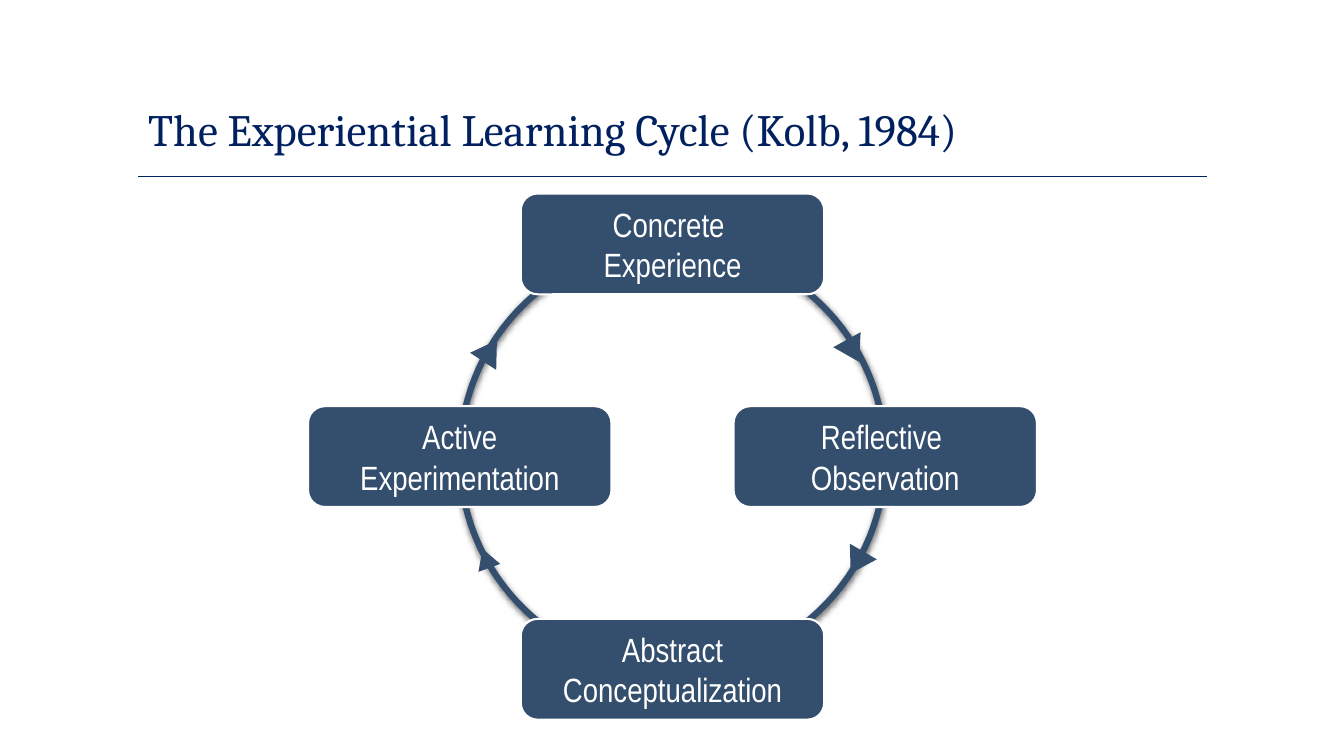
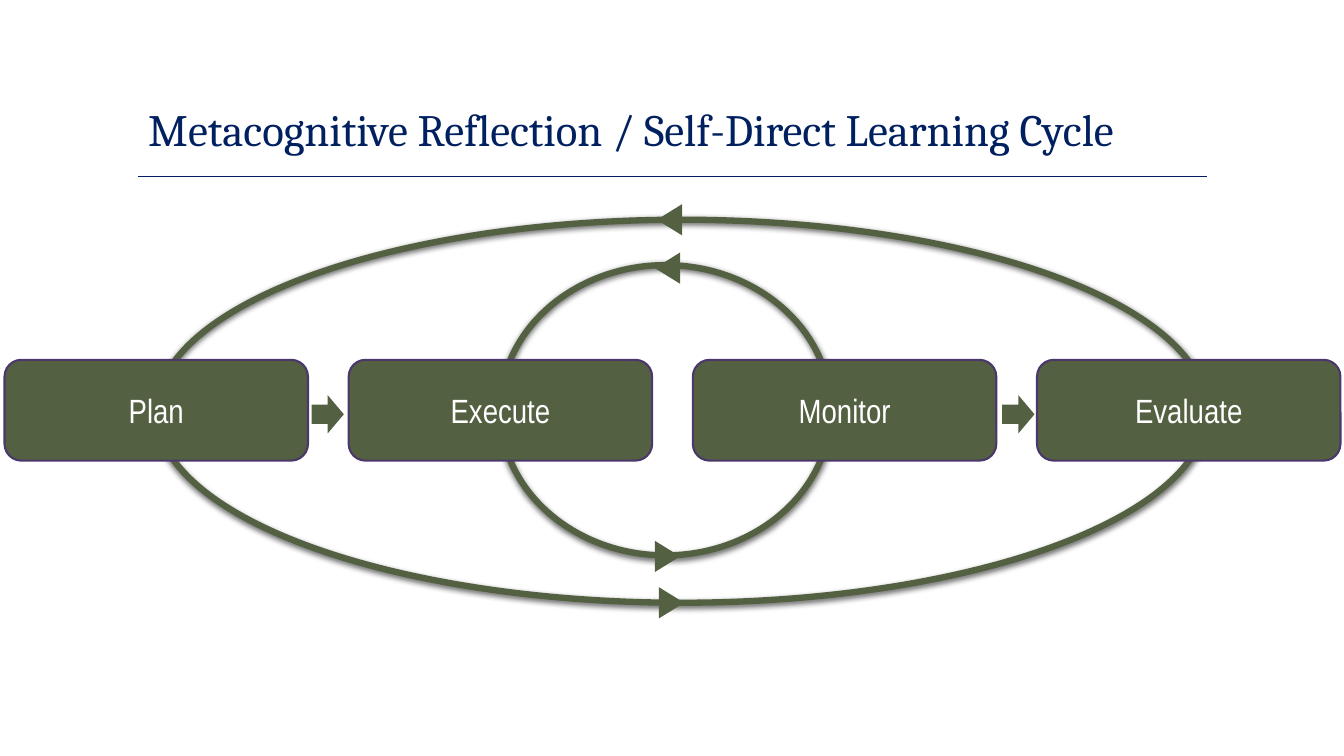
from lxml.etree import SubElement
from pptx import Presentation
from pptx.dml.color import RGBColor
from pptx.enum.shapes import MSO_CONNECTOR as Link, MSO_SHAPE as Kind
from pptx.enum.text import MSO_ANCHOR as Anchor, MSO_AUTO_SIZE as Fit, PP_ALIGN as Align
from pptx.oxml.ns import qn
from pptx.util import Emu, Pt

# Content: every part is placed by its centre, in px (100 to the inch)
HUE = {"navy": "002060", "blue": "344E6D", "green": "536142",
       "plum": "4C376B", "white": "FFFFFF", "black": "000000"}
TITLE, RULE = (137, 38, 1060, 180), (137, 1197, 175)
BOX, TIP, ARROW = (301, 100), (31, 25), (32, 38)

MID, REACH = (667, 453), 211
STAGES = [  # lines, direction from the middle
    (["Concrete ", "Experience"], (0, -1)),
    (["Reflective ", "Observation"], (1, 0)),
    (["Abstract Conceptualization"], (0, 1)),
    (["Active Experimentation"], (-1, 0)),
]
TURNS = [  # centre, size, angle
    ((846, 348), TIP, 151.3),
    ((850, 558), TIP, 210.1),
    ((482, 554), (23, 20), 340),
    ((486, 348), TIP, 33.2),
]

STEPS = ["Plan", "Execute", "Monitor", "Evaluate"]
FIRST, LAST, ROW = 155, 1179, 407
RINGS = [((676, 408), (1042, 380)), ((660, 407), (328, 288))]
FLOWS = [((664, 218), 270), ((666, 598), 90), ((662, 552), 90), ((662, 266), 270)]
ARROWS = [(325, 411), (1010, 411)]


def px(n):
    return Emu(round(n * 9144))


def rgb(name):
    return RGBColor.from_string(HUE[name])


def write(para, text, face, size, hue):
    run = para.add_run()
    run.text = text
    run.font.name, run.font.size = face, Pt(size)
    run.font.color.rgb = rgb(hue)


def start(deck, text):
    """Add a slide with the shared title and the rule below it."""
    slide = deck.slides.add_slide(deck.slide_layouts[5])
    title = slide.shapes.title
    title.left, title.top, title.width, title.height = map(px, TITLE)
    frame = title.text_frame
    frame.word_wrap, frame.auto_size = True, Fit.NONE
    frame.vertical_anchor = Anchor.MIDDLE
    para = frame.paragraphs[0]
    para.alignment = Align.LEFT
    write(para, text, "Cambria", 32, "navy")

    left, right, y = map(px, RULE)
    rule = slide.shapes.add_connector(Link.STRAIGHT, left, y, right, y)
    rule.line.color.rgb, rule.line.width = rgb("navy"), Pt(0.5)
    SubElement(rule._element.spPr, qn("a:effectLst"))
    return slide


def put(slide, kind, mid, size, fill=None, line=None, width=1.5, turn=0):
    """Add a shape centred on mid, without a shadow."""
    (x, y), (w, h) = mid, size
    shape = slide.shapes.add_shape(kind, px(x - w / 2), px(y - h / 2), px(w), px(h))
    shape.shadow.inherit = False
    shape.rotation = turn
    if fill:
        shape.fill.solid()
        shape.fill.fore_color.rgb = rgb(fill)
    else:
        shape.fill.background()
    if line:
        shape.line.color.rgb, shape.line.width = rgb(line), Pt(width)
    else:
        shape.line.fill.background()
    return shape


def ring(slide, mid, size, hue):
    shape = put(slide, Kind.OVAL, mid, size, line=hue, width=4.5)
    glow = SubElement(shape._element.spPr.find(qn("a:effectLst")), qn("a:outerShdw"),
                      blurRad=str(Pt(4.5)), dist=str(Pt(1.5)), dir="5400000",
                      rotWithShape="0")
    tone = SubElement(glow, qn("a:srgbClr"), val=HUE["black"])
    SubElement(tone, qn("a:alpha"), val="63000")


def box(slide, mid, lines, fill, line):
    frame = put(slide, Kind.ROUNDED_RECTANGLE, mid, BOX, fill, line).text_frame
    frame.word_wrap, frame.vertical_anchor = True, Anchor.MIDDLE
    para = frame.paragraphs[0]
    para.alignment = Align.CENTER
    for i, text in enumerate(lines):
        if i:
            para.add_line_break()
        write(para, text, "Arial Narrow", 24, "white")


def tip(slide, mid, size, turn, hue):
    put(slide, Kind.ISOSCELES_TRIANGLE, mid, size, hue, turn=turn)


def kolb(deck):
    slide = start(deck, "The Experiential Learning Cycle (Kolb, 1984)")
    ring(slide, MID, (2 * REACH, 2 * REACH), "blue")
    for lines, (dx, dy) in STAGES:
        mid = MID[0] + dx * REACH, MID[1] + dy * REACH
        box(slide, mid, lines, "blue", "white")
    for mid, size, turn in TURNS:
        tip(slide, mid, size, turn, "blue")


def loops(deck):
    slide = start(deck, "Metacognitive Reflection / Self-Direct Learning Cycle")
    for mid, size in RINGS:
        ring(slide, mid, size, "green")
    pitch = (LAST - FIRST) / (len(STEPS) - 1)
    for i, text in enumerate(STEPS):
        box(slide, (FIRST + i * pitch, ROW), [text], "green", "plum")
    for mid in ARROWS:
        put(slide, Kind.RIGHT_ARROW, mid, ARROW, "green")
    for mid, turn in FLOWS:
        tip(slide, mid, TIP, turn, "green")


def main():
    deck = Presentation()
    deck.slide_width, deck.slide_height = px(1333), px(750)
    kolb(deck)
    loops(deck)
    deck.save("out.pptx")


if __name__ == "__main__":
    main()
